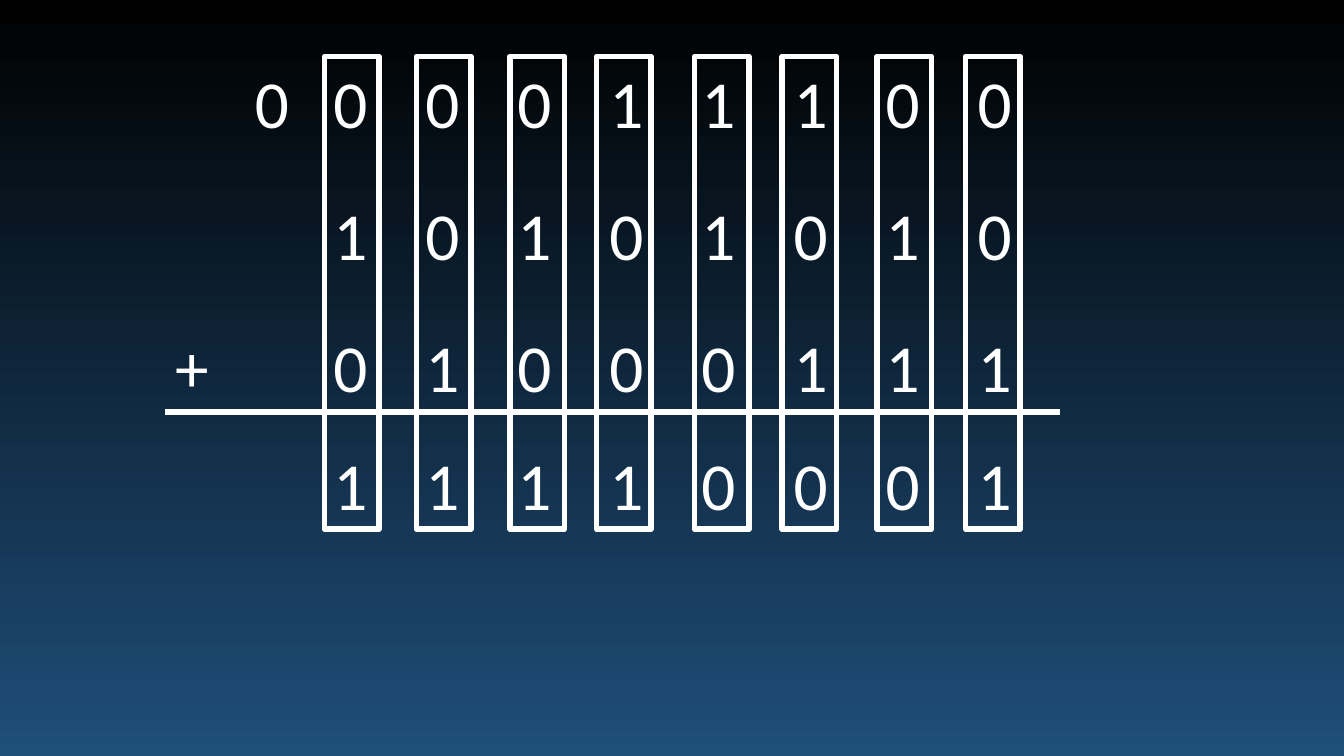
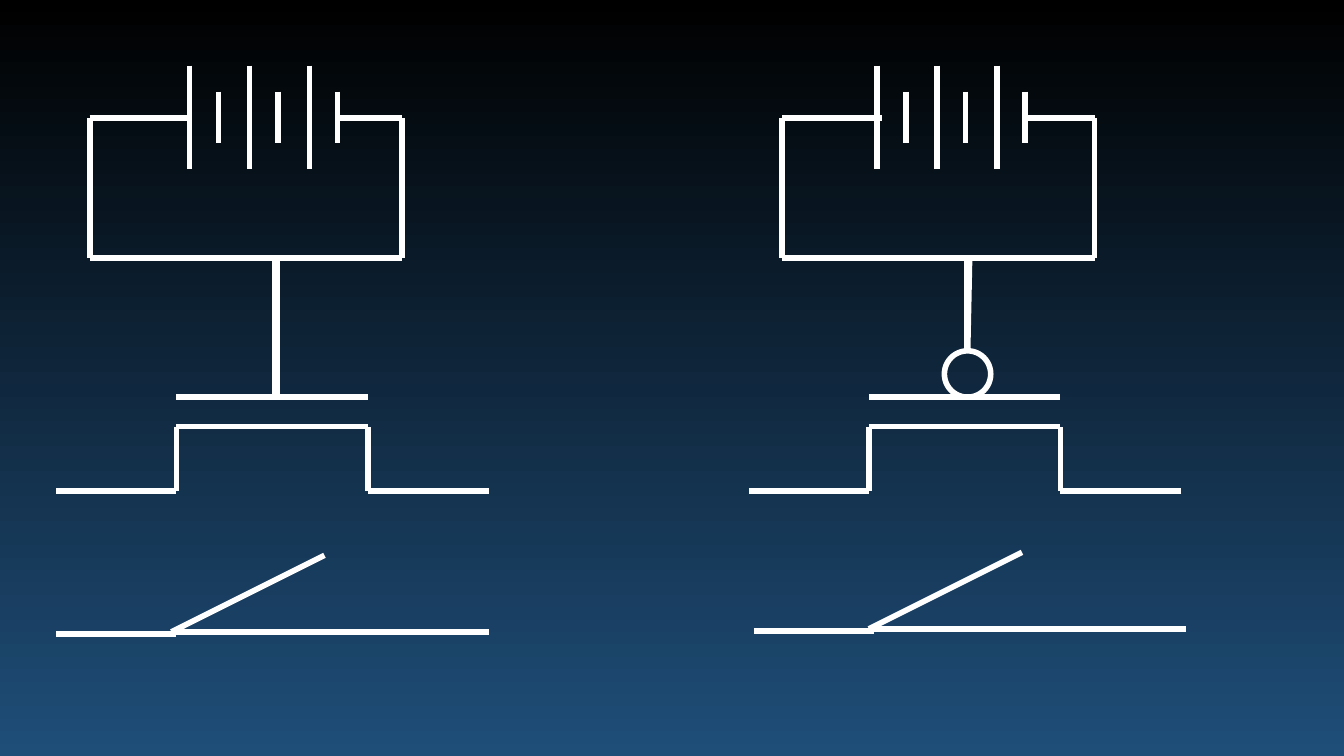
import dataclasses

import lxml.etree
import pptx
import pptx.dml.color
import pptx.enum.shapes
import pptx.enum.text
import pptx.oxml.ns
import pptx.util

Pt = pptx.util.Pt


@dataclasses.dataclass(frozen=True)
class Theme:
    ink: str = "FFFFFF"
    background_top: str = "000000"
    background_bottom: str = "1F4E79"
    font: str = "Calibri"
    digit_size: float = 48
    line_width: float = 4


THEME = Theme()

# Binary sum: digit grid and the boxes that frame its columns
DIGIT_WIDTH, DIGIT_HEIGHT = 38.9, 65.4
FIRST_COLUMN, COLUMN_PITCH = 231, 65.75
CARRY_OUT_LEFT, PLUS_LEFT = 175, 118
SUM_ROWS = {40.3: "00011100", 134.6: "10101010", 229: "01000111", 313.2: "11110001"}
CARRY_TOP, ADDEND_TOP = 40.3, 229
BOX_LEFTS = (231.8, 297.4, 364.3, 426.2, 496.1, 558.7, 626.4, 689.8)
BOX_HEIGHT = 337.7
RULE_Y = 294.5

# Circuits: distances from the left edge of each circuit
LOOP_LEFT, LOOP_RIGHT, LOOP_TOP, LOOP_BOTTOM = 64.1, 287.3, 84.4, 184.2
CHANNEL_LEFT, CHANNEL_RIGHT = 126, 262.8
LEAD_LEFT, LEAD_RIGHT = 40.3, 349.2
GATE_Y, CHANNEL_Y, LEAD_Y = 283.7, 304.8, 350.8
BUBBLE_LEFT, BUBBLE_SIZE = 180, 33.1


def rgb(value):
    return pptx.dml.color.RGBColor.from_string(value)


def style_line(line):
    line.color.rgb = rgb(THEME.ink)
    line.width = Pt(THEME.line_width)


def add_line(shapes, start_x, start_y, end_x, end_y):
    connector = shapes.add_connector(
        pptx.enum.shapes.MSO_CONNECTOR.STRAIGHT,
        Pt(start_x), Pt(start_y), Pt(end_x), Pt(end_y))
    style_line(connector.line)
    lxml.etree.SubElement(connector.element.spPr, pptx.oxml.ns.qn("a:effectLst"))


def add_outline(shapes, kind, left, top, width, height):
    shape = shapes.add_shape(kind, Pt(left), Pt(top), Pt(width), Pt(height))
    shape.shadow.inherit = False
    shape.fill.background()
    style_line(shape.line)


def add_text(shapes, text, left, top, *, width=DIGIT_WIDTH, height=DIGIT_HEIGHT,
             size=THEME.digit_size, color=THEME.ink, font=THEME.font):
    box = shapes.add_textbox(Pt(left), Pt(top), Pt(width), Pt(height))
    frame = box.text_frame
    frame.word_wrap = False
    frame.auto_size = pptx.enum.text.MSO_AUTO_SIZE.SHAPE_TO_FIT_TEXT
    run = frame.paragraphs[0].add_run()
    run.text = text
    run.font.size = Pt(size)
    run.font.name = font
    run.font.color.rgb = rgb(color)


def set_background(master):
    fill = master.background.fill
    fill.gradient()
    fill.gradient_angle = 270  # counter-clockwise: top to bottom
    for stop, color in zip(fill.gradient_stops,
                           (THEME.background_top, THEME.background_bottom)):
        stop.color.rgb = rgb(color)


def add_blank_slide(presentation):
    return presentation.slides.add_slide(presentation.slide_layouts[6])


def build_sum_slide(presentation):
    shapes = add_blank_slide(presentation).shapes
    # Carries, both addends and the result
    for top, digits in SUM_ROWS.items():
        for column, digit in enumerate(digits):
            add_text(shapes, digit, FIRST_COLUMN + column * COLUMN_PITCH, top)
    add_text(shapes, "0", CARRY_OUT_LEFT, CARRY_TOP)
    add_text(shapes, "+", PLUS_LEFT, ADDEND_TOP)
    add_line(shapes, PLUS_LEFT, RULE_Y, 757.4, RULE_Y)
    # Column frames
    for left in BOX_LEFTS:
        add_outline(shapes, pptx.enum.shapes.MSO_SHAPE.RECTANGLE,
                    left, CARRY_TOP, DIGIT_WIDTH, BOX_HEIGHT)


def add_battery(slide, left):
    shapes = slide.shapes.add_group_shape().shapes
    for cell in range(3):
        long_plate = left + 135.4 + cell * 42.8
        short_plate = left + 156.2 + cell * 42.4
        add_line(shapes, long_plate, 46.8, long_plate, 121)
        add_line(shapes, short_plate, 65.5, short_plate, 102.2)


def add_half_loop(slide, left, outer, lead_end, stem_top, stem_foot, foot_y):
    """Draw one side of the supply loop with its stem down to the gate."""
    shapes = slide.shapes.add_group_shape().shapes
    outer, stem = left + outer, left + stem_top
    add_line(shapes, stem, LOOP_BOTTOM, left + stem_foot, foot_y)
    add_line(shapes, outer, LOOP_TOP, outer, LOOP_BOTTOM)
    add_line(shapes, outer, LOOP_TOP, left + lead_end, LOOP_TOP)
    add_line(shapes, outer, LOOP_BOTTOM, stem, LOOP_BOTTOM)


def add_transistor(slide, left, has_bubble):
    shapes = slide.shapes.add_group_shape().shapes
    for y in (CHANNEL_Y, GATE_Y):
        add_line(shapes, left + CHANNEL_LEFT, y, left + CHANNEL_RIGHT, y)
    for inner, outer in ((CHANNEL_LEFT, LEAD_LEFT), (CHANNEL_RIGHT, LEAD_RIGHT)):
        add_line(shapes, left + inner, LEAD_Y, left + inner, CHANNEL_Y)
        add_line(shapes, left + outer, LEAD_Y, left + inner, LEAD_Y)
    if has_bubble:
        add_outline(shapes, pptx.enum.shapes.MSO_SHAPE.OVAL, left + BUBBLE_LEFT,
                    GATE_Y - BUBBLE_SIZE, BUBBLE_SIZE, BUBBLE_SIZE)


def add_switch(slide, left, contact_y):
    pivot, contact = left + 122.4, left + CHANNEL_RIGHT
    leads = slide.shapes.add_group_shape().shapes
    add_line(leads, left + LEAD_LEFT, contact_y + 1.5, left + CHANNEL_LEFT, contact_y + 1.5)
    add_line(leads, contact, contact_y, left + LEAD_RIGHT, contact_y)
    # Closed and open positions of the arm
    add_line(slide.shapes, pivot, contact_y, contact, contact_y)
    add_line(slide.shapes, pivot, contact_y, pivot + 109.4, contact_y - 54.7)


def build_transistor_slide(presentation):
    slide = add_blank_slide(presentation)
    # Left circuit: gate driven directly
    add_battery(slide, 0)
    add_transistor(slide, 0, has_bubble=False)
    add_switch(slide, 0, 451.4)
    add_half_loop(slide, 0, LOOP_LEFT, 135.4, 198, 198, GATE_Y)
    add_half_loop(slide, 0, LOOP_RIGHT, 239, 196.6, 196.6, GATE_Y)
    # Right circuit: gate driven through an inverting bubble
    circuit_left, bubble_top = 494.6, GATE_Y - BUBBLE_SIZE
    add_battery(slide, 491)
    add_half_loop(slide, circuit_left, LOOP_LEFT, 135.4, 198, 196.6, bubble_top)
    add_half_loop(slide, circuit_left, LOOP_RIGHT, 239, 196, 196, bubble_top)
    add_transistor(slide, circuit_left, has_bubble=True)
    add_switch(slide, 498.2, 449.2)


def main():
    presentation = pptx.Presentation()
    presentation.slide_width = Pt(960)
    presentation.slide_height = Pt(540)
    set_background(presentation.slide_master)
    build_sum_slide(presentation)
    build_transistor_slide(presentation)
    presentation.save("out.pptx")


if __name__ == "__main__":
    main()
